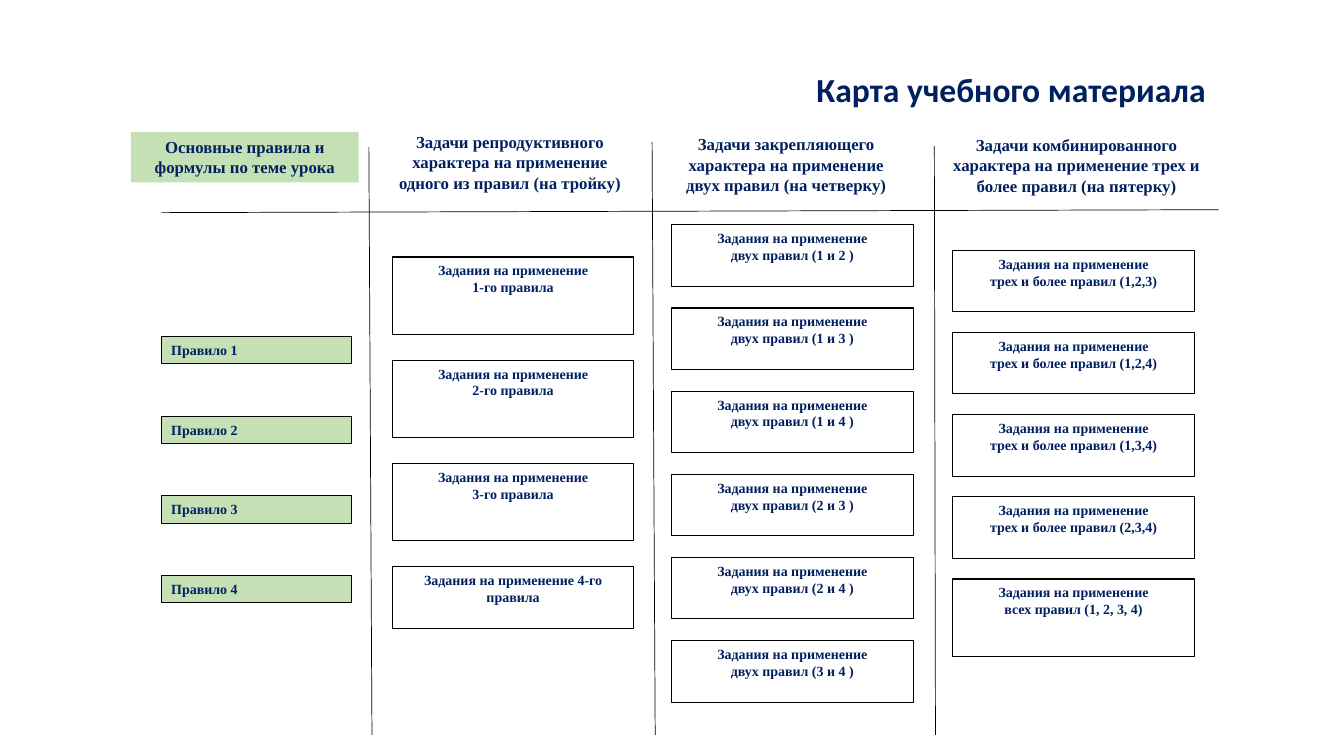
"""Build a one-slide map of lesson material with rules and task columns."""
from dataclasses import dataclass

from lxml import etree
from pptx import Presentation
from pptx.dml.color import RGBColor
from pptx.enum.shapes import MSO_CONNECTOR, MSO_SHAPE
from pptx.enum.text import MSO_ANCHOR, MSO_AUTO_SIZE, PP_ALIGN
from pptx.oxml.ns import qn
from pptx.util import Pt

RECTANGLE = MSO_SHAPE.RECTANGLE
STRAIGHT = MSO_CONNECTOR.STRAIGHT
TOP = MSO_ANCHOR.TOP
NO_FIT = MSO_AUTO_SIZE.NONE
LEFT = PP_ALIGN.LEFT
CENTER = PP_ALIGN.CENTER

TITLE = "Карта учебного материала"
TITLE_AREA = (576, 45.4, 305.3, 36)

HEADINGS = [
    ("Задачи репродуктивного характера на применение одного из правил (на тройку)",
     (275, 90.7, 178.6, 51)),
    ("Задачи закрепляющего характера на применение двух правил (на четверку)",
     (472.3, 92.2, 178.6, 51)),
    ("Задачи комбинированного характера на применение трех и более правил (на пятерку)",
     (671.8, 92.9, 194.4, 51)),
]
RULES_HEADING = ("Основные правила и формулы по теме урока", (93.6, 94.3, 162.7, 36))

RULES = [f"Правило {number}" for number in range(1, 5)]
RULES_COLUMN = {"left": 115.2, "top": 240.5, "step": 56.9, "width": 136.1, "height": 19.4}

TASK = "Задания на применение"
TASK_WIDTH = 172.8
SHORT, TALL = 43.9, 55.4
TASK_COLUMNS = [
    {"left": 280.1, "top": 183.6, "step": 73.7, "heights": [TALL] * 3 + [SHORT],
     "tasks": [f"{TASK}\n{number}-го правила" for number in range(1, 4)]
     + [f"{TASK} 4-го правила"]},
    {"left": 479.5, "top": 160.6, "step": 59.4, "heights": [SHORT] * 6,
     "tasks": [f"{TASK}\nдвух правил ({pair} )"
               for pair in ("1 и 2", "1 и 3", "1 и 4", "2 и 3", "2 и 4", "3 и 4")]},
    {"left": 680.4, "top": 178.8, "step": 58.7, "heights": [SHORT] * 4 + [TALL],
     "tasks": [f"{TASK}\nтрех и более правил ({triple})"
               for triple in ("1,2,3", "1,2,4", "1,3,4", "2,3,4")]
     + [f"{TASK}\nвсех правил (1, 2, 3, 4)"]},
]

DIVIDERS = [
    (263.5, 105.1, 265.7, 524.9),
    (465.8, 101.5, 468, 524.9),
    (667.4, 104.4, 668.2, 524.9),
    (115.2, 151.9, 870.5, 149.8),
]


@dataclass(frozen=True)
class Theme:
    """Hold the colours, fonts and sizes of the slide."""
    ink: RGBColor = RGBColor(0x00, 0x20, 0x60)
    green: RGBColor = RGBColor(0xC5, 0xE0, 0xB4)
    black: RGBColor = RGBColor(0, 0, 0)
    title_font: str = "Calibri"
    body_font: str = "Times New Roman"
    title_size: float = 24
    heading_size: float = 12
    body_size: float = 10
    border: float = 0.75
    divider: float = 0.5


THEME = Theme()


def write(shape, text, size, align, font_name=THEME.body_font):
    """Fill a shape with bold text, one paragraph per line."""
    frame = shape.text_frame
    frame.text = text
    frame.word_wrap = True
    frame.auto_size = NO_FIT
    frame.vertical_anchor = TOP
    for para in frame.paragraphs:
        para.alignment = align
        para.font.name = font_name
        para.font.size = Pt(size)
        para.font.bold = True
        para.font.color.rgb = THEME.ink


def add_box(page, text, area, size=THEME.body_size, align=CENTER, fill=None, bordered=True):
    """Add a text rectangle with an optional fill and border."""
    box = page.shapes.add_shape(RECTANGLE, *map(Pt, area))
    box.shadow.inherit = False
    if fill is None:
        box.fill.background()
    else:
        box.fill.solid()
        box.fill.fore_color.rgb = fill
    if bordered:
        box.line.color.rgb = THEME.black
        box.line.width = Pt(THEME.border)
    else:
        box.line.fill.background()
    write(box, text, size, align)


def add_divider(page, ends):
    """Add a thin black line without a shadow."""
    line = page.shapes.add_connector(STRAIGHT, *map(Pt, ends))
    line.line.color.rgb = THEME.black
    line.line.width = Pt(THEME.divider)
    etree.SubElement(line._element.spPr, qn("a:effectLst"))


def main():
    """Build and save the deck."""
    deck = Presentation()
    deck.slide_width, deck.slide_height = Pt(960), Pt(540)
    page = deck.slides.add_slide(deck.slide_layouts[5])

    title = page.shapes.title
    title.left, title.top, title.width, title.height = map(Pt, TITLE_AREA)
    write(title, TITLE, THEME.title_size, LEFT, THEME.title_font)

    for index, rule in enumerate(RULES):
        top = RULES_COLUMN["top"] + index * RULES_COLUMN["step"]
        area = (RULES_COLUMN["left"], top, RULES_COLUMN["width"], RULES_COLUMN["height"])
        add_box(page, rule, area, align=LEFT, fill=THEME.green)

    for column in TASK_COLUMNS:
        for index, (task, height) in enumerate(zip(column["tasks"], column["heights"])):
            top = column["top"] + index * column["step"]
            add_box(page, task, (column["left"], top, TASK_WIDTH, height))

    for ends in DIVIDERS:
        add_divider(page, ends)

    add_box(page, *RULES_HEADING, size=THEME.heading_size, fill=THEME.green, bordered=False)
    for text, area in HEADINGS:
        heading = page.shapes.add_textbox(*map(Pt, area))
        write(heading, text, THEME.heading_size, CENTER)

    deck.save("out.pptx")


if __name__ == "__main__":
    main()
